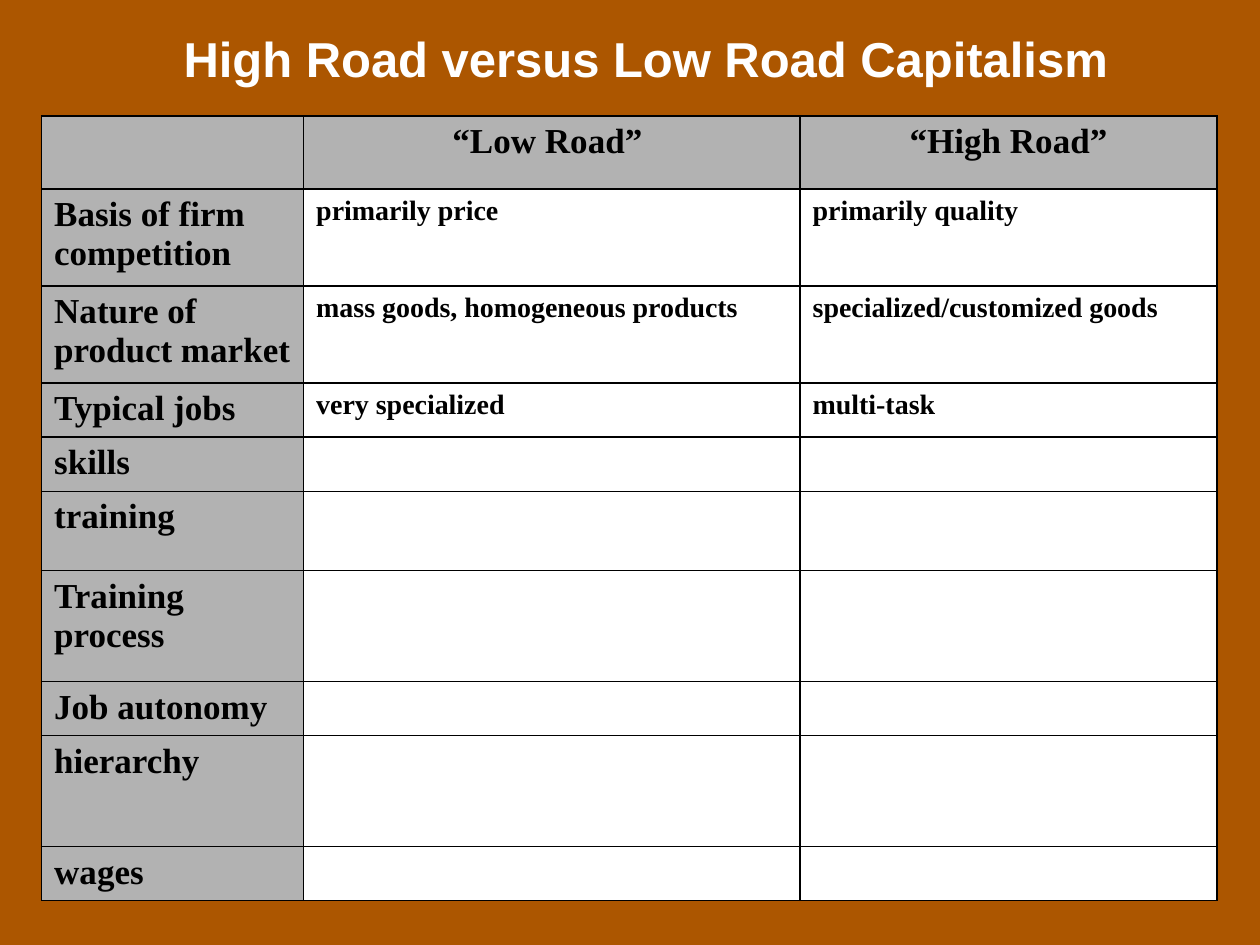
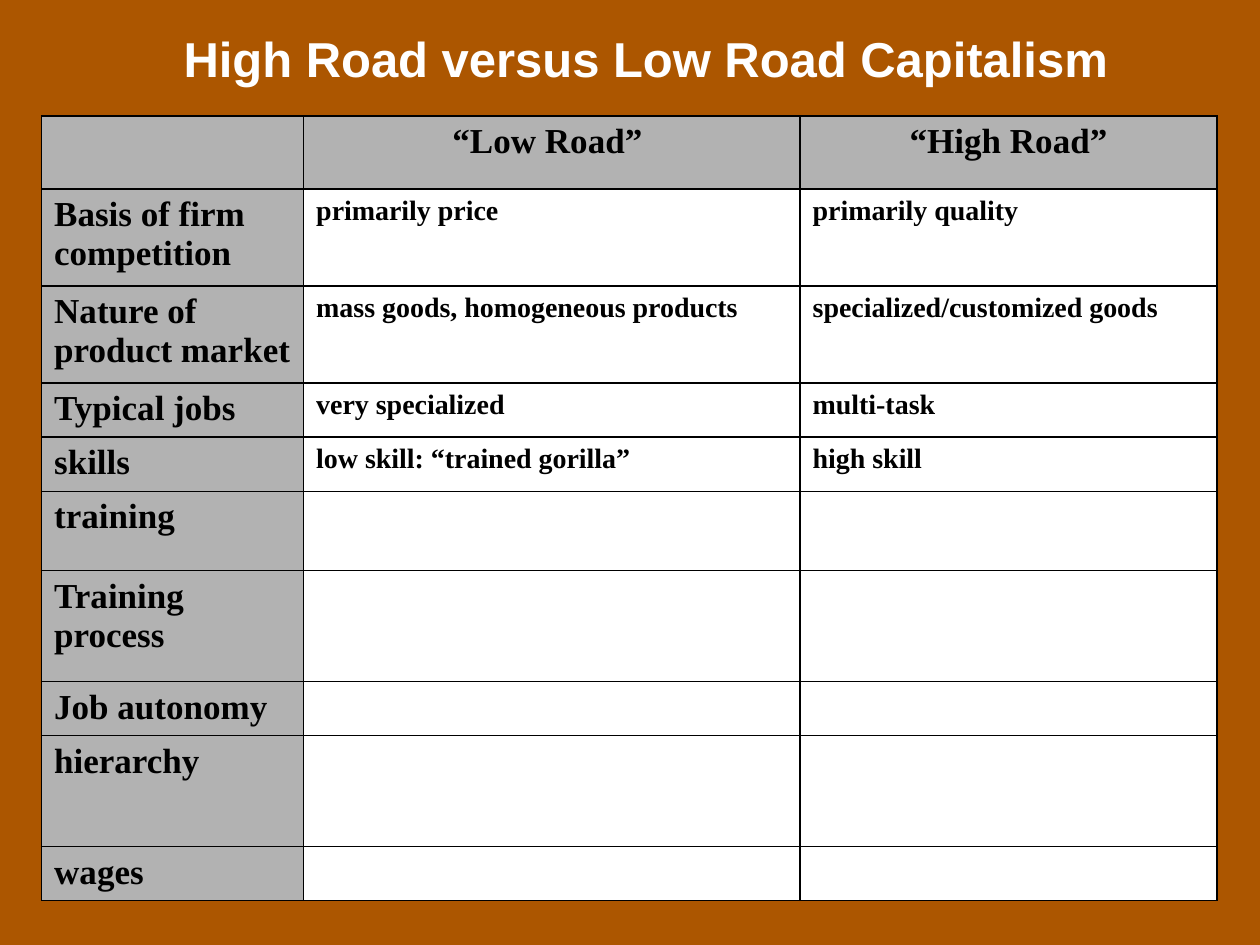
"""Build two slides that compare low road and high road capitalism."""
from dataclasses import dataclass

from lxml import etree
from pptx import Presentation
from pptx import util as u
from pptx.dml.color import RGBColor
from pptx.enum import text
from pptx.oxml import ns


@dataclass(frozen=True)
class Theme:
    background: str = "AC5600"
    header_fill: str = "B2B2B2"
    body_fill: str = "FFFFFF"
    title_color: str = "FFFFFF"
    ink: str = "000000"
    title_font: str = "Arial"
    table_font: str = "Times New Roman"
    title_size: int = 28
    header_size: int = 20
    body_size: int = 16
    border_width: int = 1


@dataclass(frozen=True)
class Topic:
    label: str
    height: float
    low: str = ""
    high: str = ""


THEME = Theme()
TITLE = "High Road versus Low Road Capitalism"
COLUMN_WIDTHS = (2.08, 3.94, 3.31)
HEADER = Topic("", 0.58, "“Low Road” ", "“High Road”")
TOPICS = (
    Topic("Basis of firm competition", 0.77, "primarily price", "primarily quality"),
    Topic("Nature of product market", 0.77, "mass goods, homogeneous products",
          "specialized/customized goods"),
    Topic("Typical jobs", 0.43, "very specialized", "multi-task"),
    Topic("skills", 0.43, "low skill: “trained gorilla”", "high skill"),
    Topic("training", 0.63),
    Topic("Training\nprocess", 0.88),
    Topic("Job autonomy", 0.43),
    Topic("hierarchy", 0.88),
    Topic("wages", 0.43),
)
REVEALED_COUNTS = (3, 4)


def format_text(frame, font_name: str, size: int, color: str, align) -> None:
    """Apply one bold style to all text in a frame."""
    for para in frame.paragraphs:
        para.alignment = align
        for span in para.runs:
            span.font.name = font_name
            span.font.size = u.Pt(size)
            span.font.bold = True
            span.font.color.rgb = RGBColor.from_string(color)


def add_borders(cell) -> None:
    """Draw a solid line on all four sides of a cell."""
    properties = cell._tc.get_or_add_tcPr()
    for side in ("lnL", "lnR", "lnT", "lnB"):
        line = etree.SubElement(properties, ns.qn(f"a:{side}"),
                                w=str(u.Pt(THEME.border_width)))
        fill = etree.SubElement(line, ns.qn("a:solidFill"))
        etree.SubElement(fill, ns.qn("a:srgbClr"), val=THEME.ink)


def fill_cell(cell, wording: str, is_header: bool, align) -> None:
    """Write and style one table cell."""
    add_borders(cell)
    cell.fill.solid()
    cell.fill.fore_color.rgb = RGBColor.from_string(
        THEME.header_fill if is_header else THEME.body_fill)
    cell.text_frame.text = wording
    size = THEME.header_size if is_header else THEME.body_size
    format_text(cell.text_frame, THEME.table_font, size, THEME.ink, align)


def add_title(page) -> None:
    """Place and style the slide title."""
    box = page.shapes.title
    box.left, box.top = u.Inches(1.25), u.Inches(0.17)
    box.width, box.height = u.Inches(7.75), u.Inches(0.57)
    frame = box.text_frame
    frame.text = TITLE
    frame.word_wrap = True
    frame.auto_size = text.MSO_AUTO_SIZE.NONE
    frame.vertical_anchor = text.MSO_ANCHOR.BOTTOM
    format_text(frame, THEME.title_font, THEME.title_size, THEME.title_color,
                text.PP_ALIGN.CENTER)


def add_comparison(page, revealed: int) -> None:
    """Add the comparison table with the first answers revealed."""
    rows = (HEADER, *TOPICS)
    table = page.shapes.add_table(
        len(rows), len(COLUMN_WIDTHS), u.Inches(0.33), u.Inches(0.92),
        u.Inches(sum(COLUMN_WIDTHS)), u.Inches(sum(row.height for row in rows))).table
    table.first_row = table.horz_banding = False
    for column, width in zip(table.columns, COLUMN_WIDTHS):
        column.width = u.Inches(width)
    for row_index, topic in enumerate(rows):
        table.rows[row_index].height = u.Inches(topic.height)
        answers = (topic.low, topic.high) if row_index <= revealed else ("", "")
        align = text.PP_ALIGN.LEFT if row_index else text.PP_ALIGN.CENTER
        for column_index, wording in enumerate((topic.label, *answers)):
            is_header = row_index == 0 or column_index == 0
            fill_cell(table.cell(row_index, column_index), wording, is_header, align)


def main() -> None:
    """Build and save the deck."""
    deck = Presentation()
    deck.slide_width, deck.slide_height = u.Inches(10), u.Inches(7.5)
    backdrop = deck.slide_master.background.fill
    backdrop.solid()
    backdrop.fore_color.rgb = RGBColor.from_string(THEME.background)
    title_only = deck.slide_layouts.get_by_name("Title Only")
    for revealed in REVEALED_COUNTS:
        page = deck.slides.add_slide(title_only)
        add_title(page)
        add_comparison(page, revealed)
    deck.save("out.pptx")


if __name__ == "__main__":
    main()
